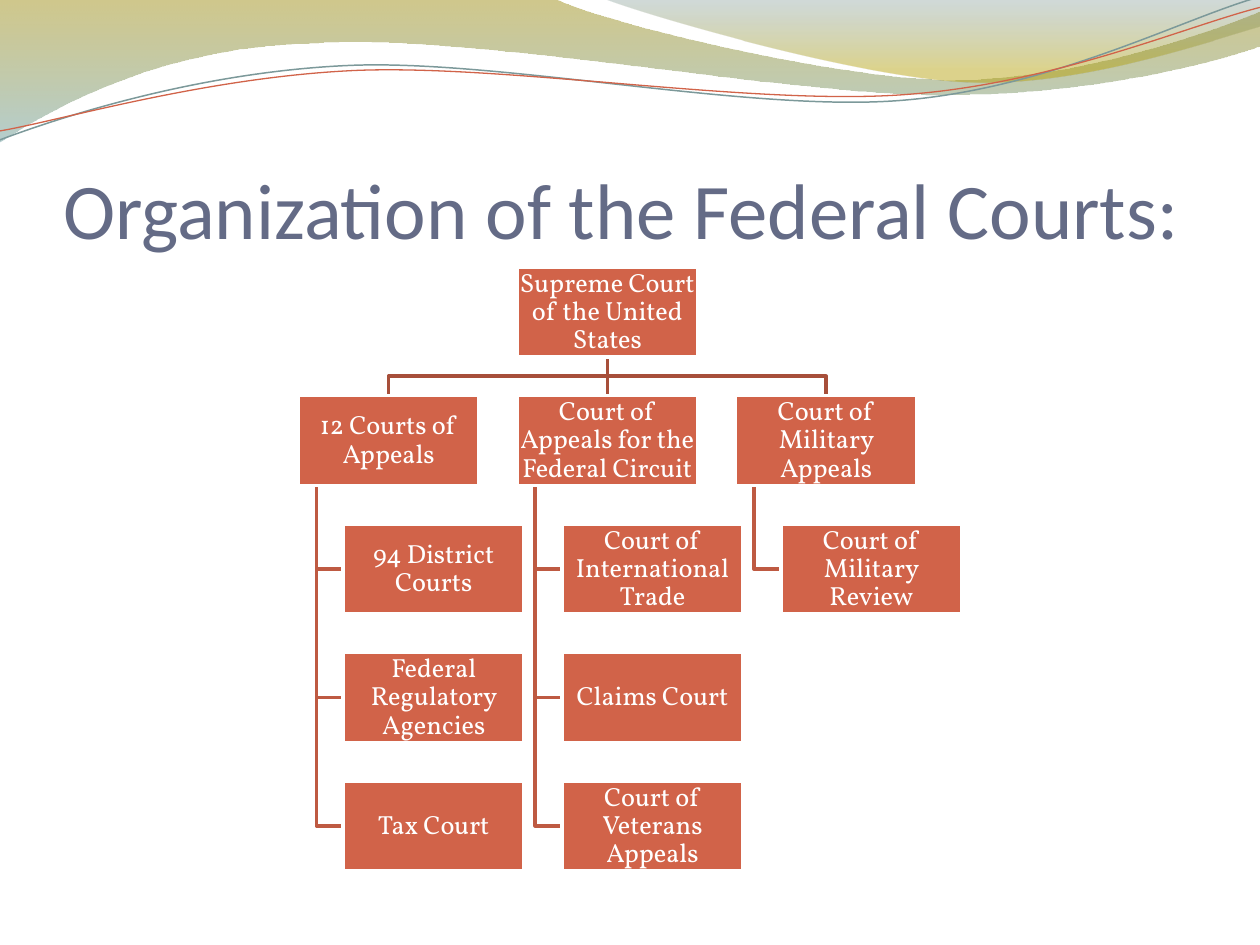
from lxml import etree
from pptx import Presentation
from pptx.dml.color import RGBColor
from pptx.enum.shapes import MSO_SHAPE
from pptx.enum.text import MSO_ANCHOR, PP_ALIGN
from pptx.oxml.ns import qn
from pptx.util import Cm, Pt

RECT = MSO_SHAPE.RECTANGLE
MIDDLE, BOTTOM = MSO_ANCHOR.MIDDLE, MSO_ANCHOR.BOTTOM
LEFT, CENTER = PP_ALIGN.LEFT, PP_ALIGN.CENTER

# Chart grid, in cm
BOX_W, BOX_H = 3.65, 1.82
COL_LEFT, COL_PITCH = 6.01, 4.41
ROW_TOP, ROW_PITCH = 5.38, 2.59
INDENT, TRUNK = 0.91, 0.37

ROOT = "Supreme Court of the United States"
BRANCHES = [
    ("12 Courts of Appeals",
     ["94 District Courts", "Federal Regulatory Agencies", "Tax Court"]),
    ("Court of Appeals for the Federal Circuit",
     ["Court of International Trade", "Claims Court", "Court of Veterans Appeals"]),
    ("Court of Military Appeals", ["Court of Military Review"]),
]

# Outlines in cm: a start point, then 2 numbers for a line or 6 for a Bézier curve.
# Bands also have gradient stops: position, colour, opacity in percent.
BANDS = [
    ([(0, 0), (11.18, -0.03),
      (12.09, 0.43, 16.87, 1.6, 19.25, 1.6),
      (21.67, 1.6, 24.33, 0.66, 25.4, 0.23), (25.43, 0.91),
      (24.97, 1.12, 22.1, 1.93, 18.95, 1.91),
      (15.8, 1.91, 9.7, 0.71, 6.53, 0.86),
      (3.28, 0.91, 1.17, 2.11, -0.03, 2.87), (0, 0)],
     [(0, "978500", 45), (1, "77A5A6", 55)]),
    ([(12.17, -0.03),
      (12.93, 0.28, 17.32, 1.57, 19.53, 1.65),
      (21.74, 1.75, 24.41, 0.81, 25.4, 0.53), (25.4, 0), (12.17, -0.03)],
     [(0, "648484", 30), (0.8, "B49F00", 45)]),
]
WAVES = [
    ([(0, 2.82),
      (1.22, 2.36, 4.01, 1.45, 7.04, 1.32),
      (10.03, 1.19, 15.06, 2.26, 18.11, 2.03),
      (21.16, 1.8, 23.83, 0.38, 25.35, -0.05)], "7C999A", 0.85),
    ([(0, 2.64),
      (1.19, 2.44, 4.17, 1.55, 7.19, 1.42),
      (10.24, 1.3, 15.16, 2.13, 18.21, 1.91),
      (21.23, 1.7, 23.9, 0.53, 25.4, 0.15)], "D16349", 0.75),
]


def rgb(value):
    return RGBColor.from_string(value)


def bend(sp, segments):
    """Merge each three line steps that stand for a curve into one Bézier step."""
    steps = iter(list(sp.element.iter(qn("a:lnTo"))))
    for segment in segments:
        step = next(steps)
        if len(segment) == 6:
            step.tag = qn("a:cubicBezTo")
            for _ in range(2):
                extra = next(steps)
                step.append(extra[0])
                extra.getparent().remove(extra)


def write(tf, text, *, size, font, color, align, anchor, inset, spacing=1.0):
    """Put one formatted paragraph in a text frame; inset is left, top, right, bottom."""
    tf.word_wrap = True
    tf.vertical_anchor = anchor
    tf.margin_left, tf.margin_top, tf.margin_right, tf.margin_bottom = map(Cm, inset)
    p = tf.paragraphs[0]
    p.alignment, p.line_spacing = align, spacing
    r = p.add_run()
    r.text = text
    r.font.size, r.font.name, r.font.color.rgb = Pt(size), font, rgb(color)


class CourtSlide:
    title_font, box_font = "Calibri", "Vollkorn"
    title_color, box_fill, white = "646B86", "D16349", "FFFFFF"
    root_line, branch_line, line_width = "A74F3A", "BE5A42", 2

    def __init__(self, prs):
        self.s = prs.slides.add_slide(prs.slide_layouts[5])

    def title(self, text, x, y, w, h):
        sp = self.s.shapes.title
        sp.left, sp.top, sp.width, sp.height = map(Cm, (x, y, w, h))
        write(sp.text_frame, text, size=45, font=self.title_font,
              color=self.title_color, align=LEFT, anchor=BOTTOM,
              inset=(0, 0.13, 0, 0))

    def freeform(self, outline, close=False):
        start, *segments = outline
        points = [(Cm(x), Cm(y)) for segment in segments
                  for x, y in zip(segment[::2], segment[1::2])]
        builder = self.s.shapes.build_freeform(*map(Cm, start))
        builder.add_line_segments(points, close=close)
        sp = builder.convert_to_shape()
        sp.shadow.inherit = False
        bend(sp, segments)
        return sp

    def band(self, outline, stops):
        sp = self.freeform(outline, close=True)
        sp.line.fill.background()
        sp.fill.gradient()
        sp.fill.gradient_angle = 270
        for stop, (position, color, _) in zip(sp.fill.gradient_stops, stops):
            stop.position, stop.color.rgb = position, rgb(color)
        colors = sp.element.spPr.iter(qn("a:srgbClr"))
        for clr, (_, _, opacity) in zip(colors, stops):
            etree.SubElement(clr, qn("a:alpha"), val=str(opacity * 1000))

    def open_path(self, outline, color, width):
        sp = self.freeform(outline)
        sp.fill.background()
        sp.line.color.rgb, sp.line.width = rgb(color), Pt(width)
        return sp

    def link(self, points, color):
        """Draw a branch of the tree behind the boxes."""
        sp = self.open_path(points, color, self.line_width)
        self.s.shapes.element.insert(2, sp.element)

    def box(self, text, x, y):
        sp = self.s.shapes.add_shape(RECT, Cm(x), Cm(y), Cm(BOX_W), Cm(BOX_H))
        sp.shadow.inherit = False
        sp.fill.solid()
        sp.fill.fore_color.rgb = rgb(self.box_fill)
        sp.line.color.rgb, sp.line.width = rgb(self.white), Pt(self.line_width)
        write(sp.text_frame, text, size=15, font=self.box_font, color=self.white,
              align=CENTER, anchor=MIDDLE, inset=(0.02,) * 4, spacing=0.9)

    def court_tree(self):
        root_x = COL_LEFT + COL_PITCH
        root_mid = root_x + BOX_W / 2
        root_bottom = ROW_TOP + BOX_H
        branch_y = ROW_TOP + ROW_PITCH
        bus_y = (root_bottom + branch_y) / 2
        self.box(ROOT, root_x, ROW_TOP)
        for col, (branch, courts) in enumerate(BRANCHES):
            x = COL_LEFT + col * COL_PITCH
            mid = x + BOX_W / 2
            self.box(branch, x, branch_y)
            bus = [] if x == root_x else [(root_mid, bus_y), (mid, bus_y)]
            self.link([(root_mid, root_bottom), *bus, (mid, branch_y)],
                      self.root_line)
            for row, court in enumerate(courts, start=2):
                y = ROW_TOP + row * ROW_PITCH
                self.box(court, x + INDENT, y)
                self.link([(x + TRUNK, branch_y + BOX_H),
                           (x + TRUNK, y + BOX_H / 2),
                           (x + INDENT, y + BOX_H / 2)], self.branch_line)


def main():
    prs = Presentation()
    prs.slide_width, prs.slide_height = Cm(25.4), Cm(19.05)
    slide = CourtSlide(prs)
    for outline, stops in BANDS:
        slide.band(outline, stops)
    for outline, color, width in WAVES:
        slide.open_path(outline, color, width)
    slide.title("Organization of the Federal Courts:", 1.27, 1.96, 22.86, 3.18)
    slide.court_tree()
    prs.save("out.pptx")


if __name__ == "__main__":
    main()
